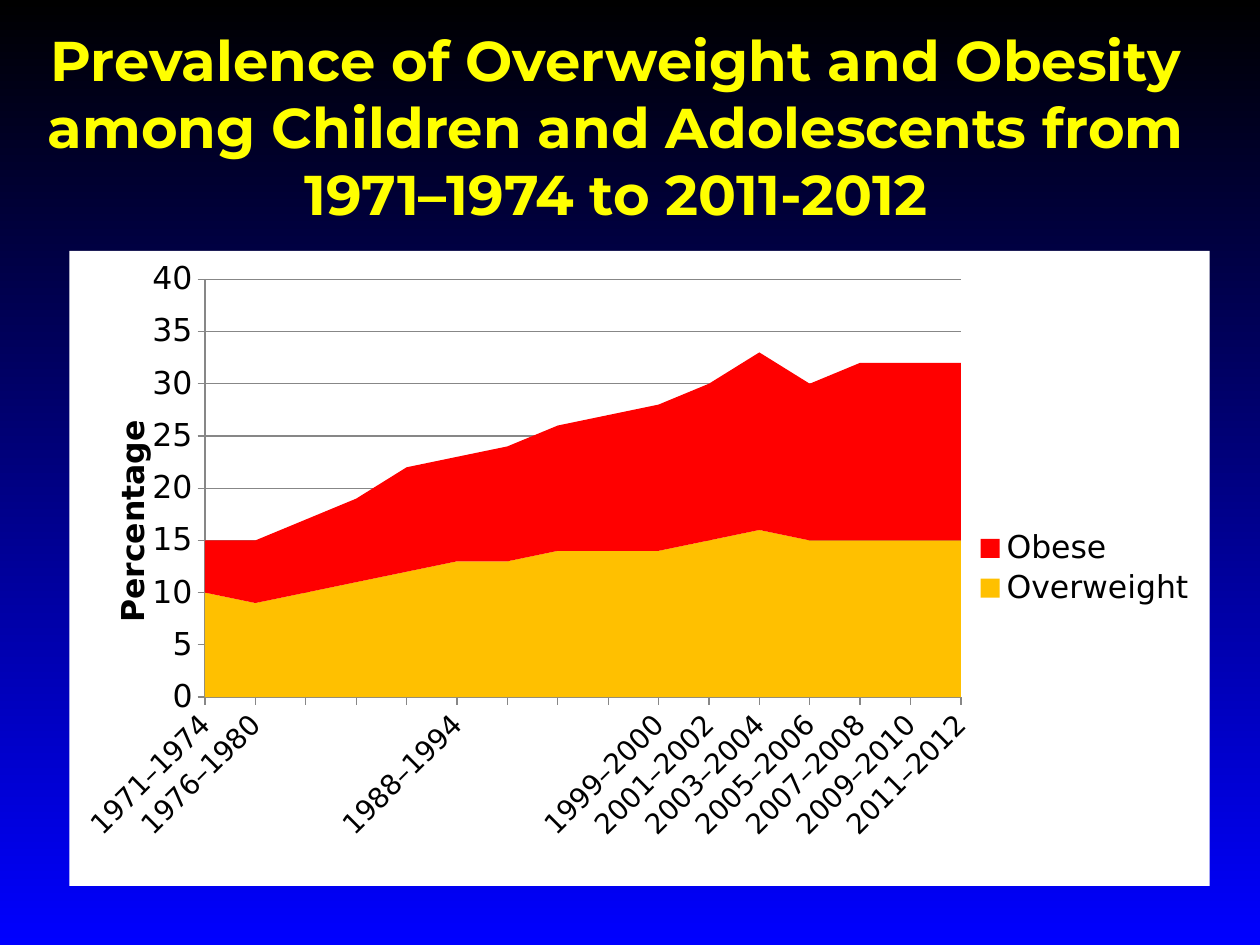
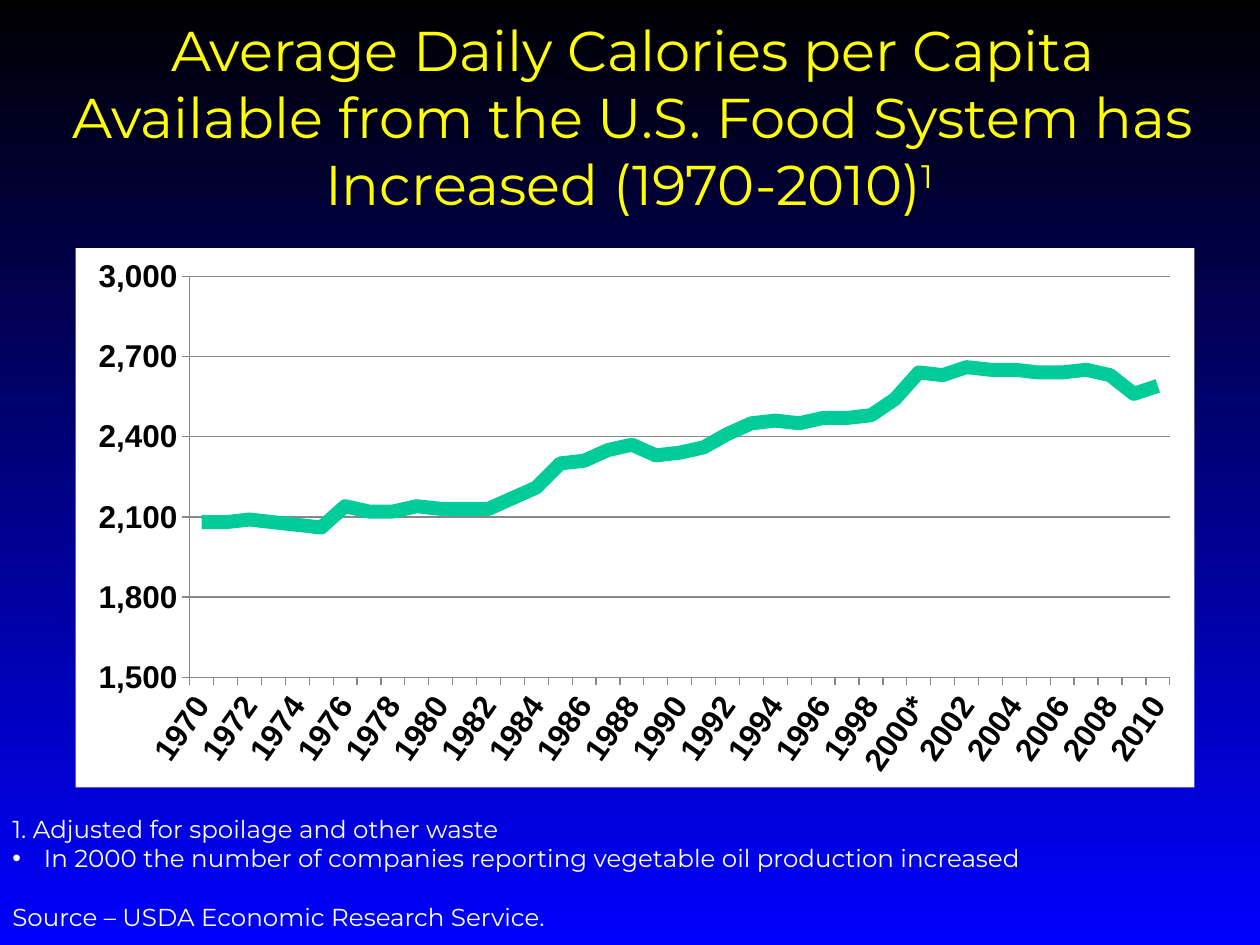
from dataclasses import dataclass
from typing import NamedTuple, Optional

from lxml.etree import SubElement
from pptx import Presentation
from pptx.chart.chart import Chart
from pptx.chart.data import CategoryChartData
from pptx.dml.color import RGBColor
from pptx.enum.chart import XL_CHART_TYPE, XL_LEGEND_POSITION, XL_TICK_MARK
from pptx.enum.text import MSO_ANCHOR, MSO_AUTO_SIZE, PP_ALIGN
from pptx.oxml import parse_xml
from pptx.oxml.ns import nsdecls, qn
from pptx.slide import Slide
from pptx.util import Inches, Pt

# Shared look
BLACK = RGBColor(0x00, 0x00, 0x00)
BLUE = RGBColor(0x00, 0x00, 0xFF)
YELLOW = RGBColor(0xFF, 0xFF, 0x00)
WHITE = RGBColor(0xFF, 0xFF, 0xFF)
GRID_GRAY = RGBColor(0x87, 0x87, 0x87)
AMBER = RGBColor(0xFF, 0xC0, 0x00)
RED = RGBColor(0xFF, 0x00, 0x00)
GREEN = RGBColor(0x00, 0xCC, 0x99)
TEXT_FONT = "Montserrat"
CHART_FONT = "DejaVu Sans"

# The slide is a grid of 10 columns and 7.5 rows
SLIDE_WIDTH, SLIDE_HEIGHT = Inches(10), Inches(7.5)
COLUMN, ROW = SLIDE_WIDTH / 10, SLIDE_HEIGHT / 7.5


class Box(NamedTuple):
    """Left, top, width and height in columns and rows."""
    left: float
    top: float
    width: float
    height: float

    def lengths(self) -> tuple[int, ...]:
        return tuple(round(value * unit) for value, unit in zip(self, (COLUMN, ROW) * 2))


class Percent(NamedTuple):
    """A place inside a chart, in percent of the chart's size."""
    x: float
    y: float
    w: Optional[float] = None
    h: Optional[float] = None


class Series(NamedTuple):
    name: str
    color: RGBColor
    values: list[int]


@dataclass
class ChartDesign:
    kind: XL_CHART_TYPE
    box: Box
    plot: Percent
    categories: list[str]
    series: list[Series]
    axis_font: str
    axis_bold: bool
    category_size: int
    label_angle: int
    label_step: int
    scale: tuple[int, int, int]
    crossing: str


@dataclass
class TitleDesign:
    text: str
    box: Box
    bold: bool = False
    superscript: str = ""


def set_layout(parent, place: Percent, inner: bool = False) -> None:
    """Give a chart part a manual place."""
    for old in parent.findall(qn("c:layout")):
        parent.remove(old)
    layout = parse_xml(f"<c:layout {nsdecls('c')}><c:manualLayout/></c:layout>")
    settings = [("layoutTarget", "inner")] if inner else []
    settings += [("xMode", "edge"), ("yMode", "edge")]
    settings += [(name, str(value / 100)) for name, value in place._asdict().items()
                 if value is not None]
    for name, value in settings:
        SubElement(layout[0], qn(f"c:{name}")).set("val", value)
    leading = parent.xpath("./c:tx | ./c:legendPos")
    if leading:
        leading[-1].addnext(layout)
    else:
        parent.insert(0, layout)


def style_axes(chart: Chart, design: ChartDesign) -> None:
    category_axis, value_axis = chart.category_axis, chart.value_axis
    for axis, size in ((category_axis, design.category_size), (value_axis, 18)):
        axis.major_tick_mark = XL_TICK_MARK.OUTSIDE
        axis.minor_tick_mark = XL_TICK_MARK.NONE
        axis.format.line.color.rgb = GRID_GRAY
        font = axis.tick_labels.font
        font.size, font.bold, font.name = Pt(size), design.axis_bold, design.axis_font
        font.color.rgb = BLACK
    category_axis.has_major_gridlines = False
    value_axis.has_major_gridlines = True
    value_axis.major_gridlines.format.line.color.rgb = GRID_GRAY
    value_axis.minimum_scale, value_axis.maximum_scale, value_axis.major_unit = design.scale
    value_axis.tick_labels.number_format = "#,##0"
    value_axis.tick_labels.number_format_is_linked = False

    # Label angle, label interval and where the axes cross
    root = chart.element
    body = root.xpath(".//c:catAx/c:txPr/a:bodyPr")[0]
    body.set("rot", str(-design.label_angle * 60000))
    body.set("vert", "horz")
    offset = root.xpath(".//c:catAx/c:lblOffset")[0]
    for name, step in (("tickMarkSkip", 1), ("tickLblSkip", design.label_step)):
        offset.addnext(parse_xml(f'<c:{name} {nsdecls("c")} val="{step}"/>'))
    for crossing in root.xpath(".//c:valAx/c:crossBetween"):
        crossing.set("val", design.crossing)


def add_chart(slide: Slide, design: ChartDesign) -> Chart:
    data = CategoryChartData(number_format="#,##0")
    data.categories = design.categories
    for series in design.series:
        data.add_series(series.name, series.values)
    chart = slide.shapes.add_chart(design.kind, *design.box.lengths(), data).chart
    chart.has_title = chart.has_legend = False
    chart.font.size, chart.font.name = Pt(18), CHART_FONT
    chart.font.color.rgb = BLACK
    chart.plots[0].vary_by_categories = False
    for drawn, series in zip(chart.plots[0].series, design.series):
        if design.kind == XL_CHART_TYPE.LINE:
            drawn.smooth = False
            drawn.format.line.width = Pt(8)
            drawn.format.line.color.rgb = series.color
        else:
            drawn.format.fill.solid()
            drawn.format.fill.fore_color.rgb = series.color
    style_axes(chart, design)

    # White chart area
    chart.element.find(qn("c:chart")).addnext(parse_xml(
        f"<c:spPr {nsdecls('c', 'a')}><a:solidFill><a:srgbClr val=\"{WHITE}\"/></a:solidFill>"
        "<a:ln><a:noFill/></a:ln></c:spPr>"))
    set_layout(chart.element.xpath(".//c:plotArea")[0], design.plot, inner=True)
    return chart


def add_value_title_and_legend(chart: Chart) -> None:
    text_frame = chart.value_axis.axis_title.text_frame
    text_frame.text = "Percentage"
    font = text_frame.paragraphs[0].font
    font.size, font.bold, font.name = Pt(18), True, CHART_FONT
    font.color.rgb = BLACK
    set_layout(chart.element.xpath(".//c:valAx/c:title")[0], Percent(3.2, 25.8))
    chart.has_legend = True
    chart.legend.position = XL_LEGEND_POSITION.RIGHT
    chart.legend.include_in_layout = False
    set_layout(chart.element.xpath(".//c:legend")[0], Percent(79.3, 43.5, 19.5, 13))


def add_titled_slide(presentation, design: TitleDesign) -> Slide:
    slide = presentation.slides.add_slide(presentation.slide_layouts[5])
    title = slide.shapes.title
    title.left, title.top, title.width, title.height = design.box.lengths()
    text_frame = title.text_frame
    text_frame.text = design.text
    text_frame.word_wrap = True
    text_frame.auto_size = MSO_AUTO_SIZE.SHAPE_TO_FIT_TEXT
    text_frame.vertical_anchor = MSO_ANCHOR.TOP
    paragraph = text_frame.paragraphs[0]
    paragraph.alignment = PP_ALIGN.CENTER
    if design.superscript:
        run = paragraph.add_run()
        run.text = design.superscript
        run.font._element.set("baseline", "30000")
    font = paragraph.font
    font.size, font.bold, font.name = Pt(32), design.bold, TEXT_FONT
    font.color.rgb = YELLOW
    return slide


def add_footnotes(slide: Slide, box: Box) -> None:
    text_frame = slide.shapes.add_textbox(*box.lengths()).text_frame
    text_frame.word_wrap = True
    text_frame.auto_size = MSO_AUTO_SIZE.SHAPE_TO_FIT_TEXT
    lines = [
        "1. Adjusted for spoilage and other waste",
        "In 2000 the number of companies reporting vegetable oil production increased",
        "Source – USDA Economic Research Service.",
    ]
    text_frame.text = "\n".join(lines)
    note, bulleted, source = text_frame.paragraphs
    for paragraph in (note, bulleted, source):
        paragraph.font.size, paragraph.font.name = Pt(14), TEXT_FONT
        paragraph.font.color.rgb = WHITE
        properties = paragraph._p.get_or_add_pPr()
        properties.set("marL", str(Inches(0.25)))
        properties.set("indent", str(-Inches(0.25)))
    source.space_before = Pt(17)
    bullet = bulleted._p.get_or_add_pPr()
    bullet.insert(0, parse_xml(f'<a:buChar {nsdecls("a")} char="•"/>'))
    bullet.insert(0, parse_xml(f'<a:buFont {nsdecls("a")} typeface="Arial"/>'))


# Slide content
PREVALENCE_TITLE = TitleDesign(
    "Prevalence of Overweight and Obesity among Children and Adolescents "
    "from 1971–1974 to 2011-2012",
    Box(0.08, 0.15, 9.62, 1.72), bold=True)

PREVALENCE_CHART = ChartDesign(
    kind=XL_CHART_TYPE.AREA_STACKED,
    box=Box(0.55, 1.99, 9.05, 5.04),
    plot=Percent(11.9, 4.5, 66.3, 65.8),
    categories=["1971–1974", "1976–1980", "", "", "", "1988–1994", "", "", "",
                *(f"{year}–{year + 1}" for year in range(1999, 2012, 2))],
    series=[
        Series("Overweight", AMBER,
               [10, 9, 10, 11, 12, 13, 13, 14, 14, 14, 15, 16, 15, 15, 15, 15]),
        Series("Obese", RED,
               [5, 6, 7, 8, 10, 10, 11, 12, 13, 14, 15, 17, 15, 17, 17, 17]),
    ],
    axis_font=CHART_FONT, axis_bold=False, category_size=16,
    label_angle=45, label_step=1, scale=(0, 40, 5), crossing="midCat")

CALORIES_TITLE = TitleDesign(
    "Average Daily Calories per Capita Available from the U.S. Food System "
    "has Increased (1970-2010)",
    Box(0.3, 0.07, 9.45, 1.72), superscript="1 ")

CALORIES_CHART = ChartDesign(
    kind=XL_CHART_TYPE.LINE,
    box=Box(0.6, 1.97, 8.88, 4.28),
    plot=Percent(10.2, 5.2, 87.6, 74.4),
    categories=["2000*" if year == 2000 else str(year) for year in range(1970, 2011)],
    series=[Series("Series 1", GREEN, [
        2080, 2080, 2090, 2080, 2070, 2060, 2140, 2120, 2120, 2140,
        2130, 2130, 2130, 2170, 2210, 2300, 2310, 2350, 2370, 2330,
        2340, 2360, 2410, 2450, 2460, 2450, 2470, 2470, 2480, 2540,
        2640, 2630, 2660, 2650, 2650, 2640, 2640, 2650, 2630, 2560, 2590])],
    axis_font="Arial", axis_bold=True, category_size=18,
    label_angle=55, label_step=2, scale=(1500, 3000, 300), crossing="between")


def main() -> None:
    presentation = Presentation()
    presentation.slide_width, presentation.slide_height = SLIDE_WIDTH, SLIDE_HEIGHT

    # Shared background, black at the top to blue at the bottom
    fill = presentation.slide_master.background.fill
    fill.gradient()
    fill.gradient_angle = 270
    for stop, color in zip(fill.gradient_stops, (BLACK, BLUE)):
        stop.color.rgb = color

    # Prevalence slide
    prevalence = add_titled_slide(presentation, PREVALENCE_TITLE)
    add_value_title_and_legend(add_chart(prevalence, PREVALENCE_CHART))

    # Calories slide
    calories = add_titled_slide(presentation, CALORIES_TITLE)
    add_chart(calories, CALORIES_CHART)
    add_footnotes(calories, Box(0, 6.41, 8.91, 1.04))

    presentation.save("out.pptx")


if __name__ == "__main__":
    main()
